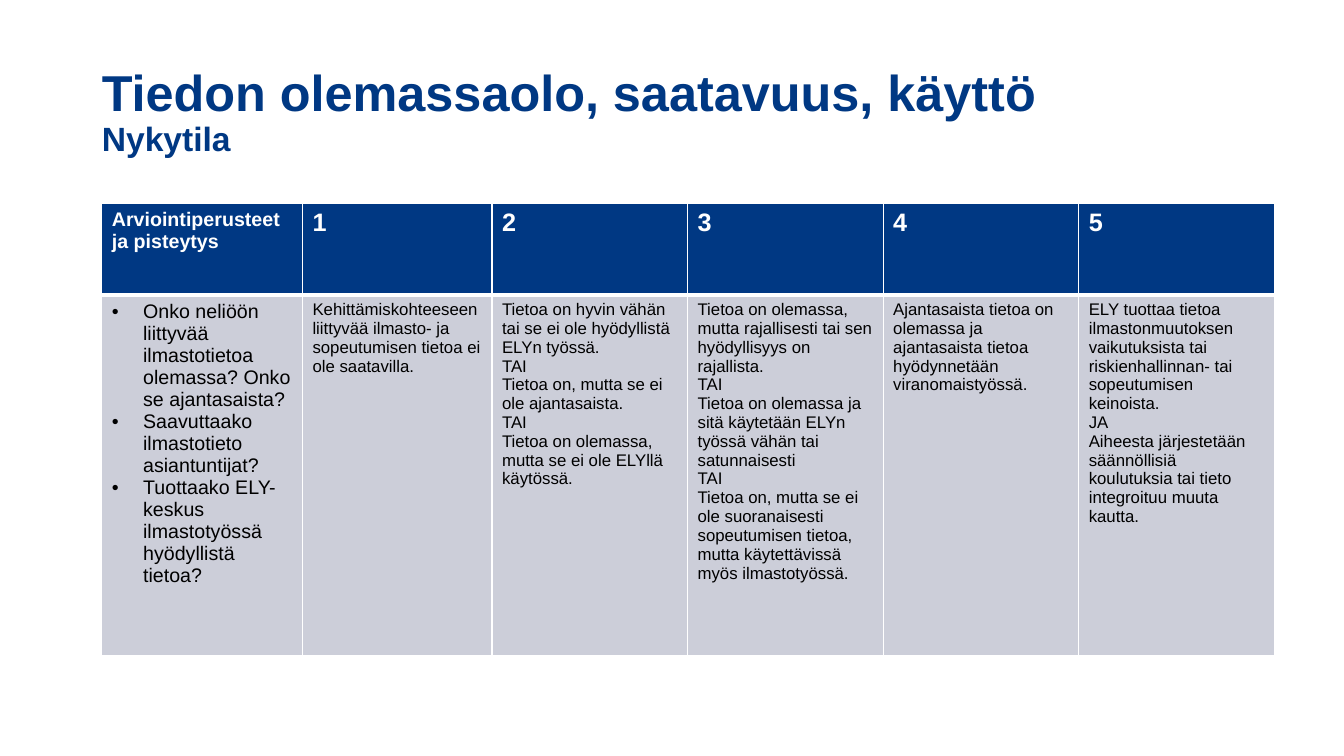
from lxml import etree
from pptx import Presentation
from pptx import util as u
from pptx.dml.color import RGBColor
from pptx.enum import text
from pptx.oxml.ns import qn

PX = 9144  # 100 px to the inch
BLUE, GREY, WHITE, BLACK = "003883", "CCCED9", "FFFFFF", "000000"


def color(code):
    return RGBColor.from_string(code)


class Deck:
    def __init__(self, wide, high, face):
        self.prs = Presentation()
        self.prs.slide_width, self.prs.slide_height = wide * PX, high * PX
        self.face = face
        self.slide = self.prs.slides.add_slide(self.prs.slide_layouts[5])

    def style(self, para, size, ink, bold=False):
        font = para.font
        font.name, font.size, font.bold = self.face, u.Pt(size), bold
        font.color.rgb = color(ink)

    def title(self, box, head, sub):
        shape = self.slide.shapes.title
        shape.left, shape.top, shape.width, shape.height = [n * PX for n in box]
        frame = shape.text_frame
        frame.margin_left = frame.margin_right = 0
        frame.margin_top = frame.margin_bottom = 0
        frame.vertical_anchor = text.MSO_ANCHOR.MIDDLE
        frame.auto_size = text.MSO_AUTO_SIZE.NONE
        para = frame.paragraphs[0]
        para.alignment = text.PP_ALIGN.LEFT
        para.line_spacing = 0.9
        self.style(para, 36, BLUE, True)
        para.add_run().text = head
        para.add_line_break()
        run = para.add_run()
        run.text = sub
        run.font.size = u.Pt(24)

    def table(self, left, top, cols, rows):
        frame = self.slide.shapes.add_table(
            len(rows), len(cols), left * PX, top * PX, sum(cols) * PX, sum(rows) * PX)
        grid = frame.table
        for col, wide in zip(grid.columns, cols):
            col.width = wide * PX
        for row, high in zip(grid.rows, rows):
            row.height = high * PX
        return grid

    def border(self, cell, **widths):
        props = cell._tc.get_or_add_tcPr()
        for side in "LRTB":
            line = etree.SubElement(props, qn("a:ln" + side), w=str(u.Pt(widths.get(side, 1))))
            fill = etree.SubElement(line, qn("a:solidFill"))
            etree.SubElement(fill, qn("a:srgbClr"), val=WHITE)

    def bullet(self, para, indent):
        props = para._p.get_or_add_pPr()
        props.set("marL", str(indent * PX))
        props.set("indent", str(-indent * PX))
        etree.SubElement(props, qn("a:buFont"), typeface=self.face)
        etree.SubElement(props, qn("a:buChar"), char="•")

    def cell(self, cell, lines, fill, size, ink, bold=False, dots=False, **widths):
        self.border(cell, **widths)
        cell.fill.solid()
        cell.fill.fore_color.rgb = color(fill)
        cell.text = "\n".join(lines)
        for para in cell.text_frame.paragraphs:
            if dots:
                self.bullet(para, 31)
            self.style(para, size, ink, bold)


HEADS = ["Arviointiperusteet ja pisteytys", "1", "2", "3", "4", "5"]
BODY = [
    ["Onko neliöön liittyvää ilmastotietoa olemassa? Onko se ajantasaista?",
     "Saavuttaako ilmastotieto asiantuntijat?",
     "Tuottaako ELY-keskus ilmastotyössä hyödyllistä tietoa?"],
    ["Kehittämiskohteeseen liittyvää ilmasto- ja sopeutumisen tietoa ei ole saatavilla."],
    ["Tietoa on hyvin vähän tai se ei ole hyödyllistä ELYn työssä.",
     "TAI",
     "Tietoa on, mutta se ei ole ajantasaista.",
     "TAI",
     "Tietoa on olemassa, mutta se ei ole ELYllä käytössä."],
    ["Tietoa on olemassa, mutta rajallisesti tai sen hyödyllisyys on rajallista.",
     "TAI",
     "Tietoa on olemassa ja sitä käytetään ELYn työssä vähän tai satunnaisesti",
     "TAI",
     "Tietoa on, mutta se ei ole suoranaisesti sopeutumisen tietoa, "
     "mutta käytettävissä myös ilmastotyössä."],
    ["Ajantasaista tietoa on olemassa ja",
     "ajantasaista tietoa hyödynnetään viranomaistyössä."],
    ["ELY tuottaa tietoa ilmastonmuutoksen vaikutuksista tai "
     "riskienhallinnan- tai sopeutumisen keinoista.",
     "JA",
     "Aiheesta järjestetään säännöllisiä koulutuksia tai tieto integroituu muuta kautta."],
]


def main():
    deck = Deck(1333, 750, "Arial")

    # Title
    deck.title((101, 51, 1163, 122), "Tiedon olemassaolo, saatavuus, käyttö", "Nykytila")

    # Scoring table: criteria first, then the five levels
    grid = deck.table(101, 202, [199, 188] + [194] * 4, [91, 357])
    for i, (head, lines) in enumerate(zip(HEADS, BODY)):
        first = i == 0
        deck.cell(grid.cell(0, i), [head], BLUE, 14 if first else 18, WHITE, bold=True, B=3)
        deck.cell(grid.cell(1, i), lines, GREY, 14 if first else 12, BLACK, dots=first, T=3)

    deck.prs.save("out.pptx")


if __name__ == "__main__":
    main()
